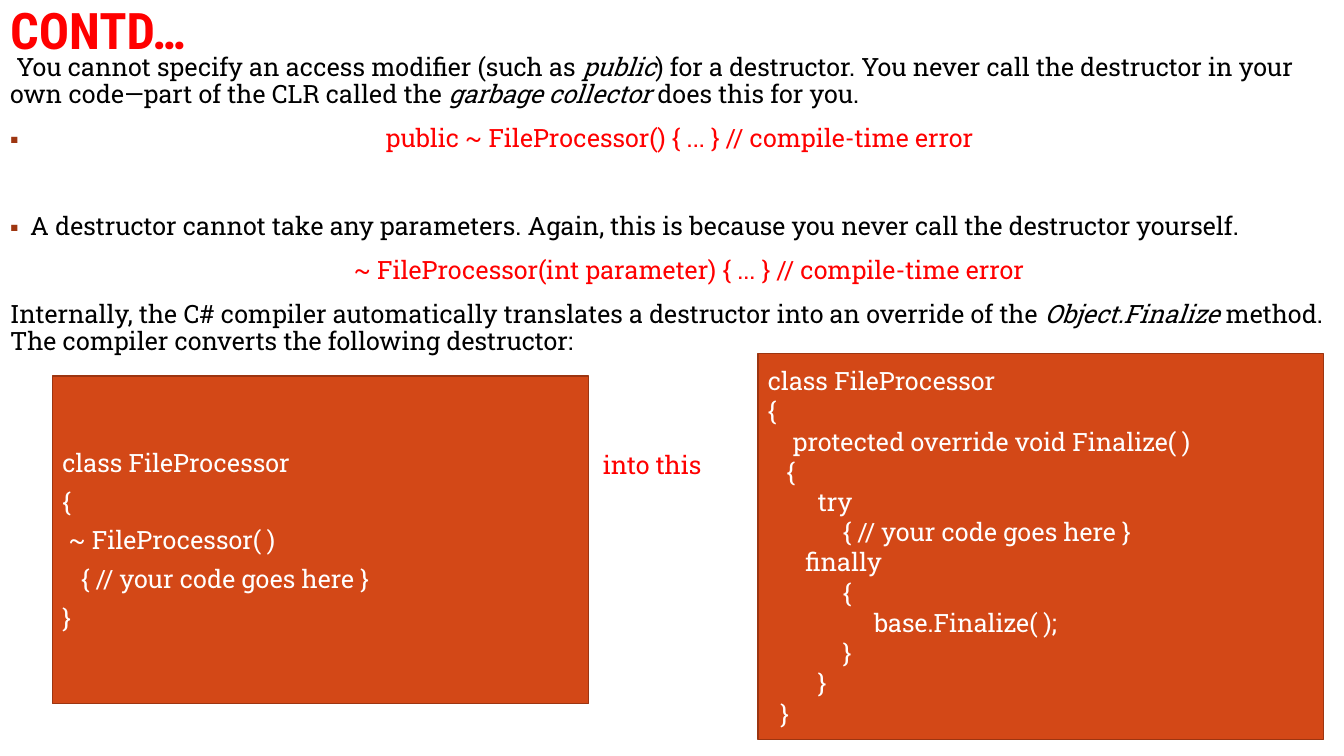
"""Build a slide on destructors and the finalizer they compile into."""
from dataclasses import dataclass

from lxml.etree import SubElement
from pptx import Presentation
from pptx.dml.color import RGBColor
from pptx.enum.shapes import MSO_SHAPE
from pptx.enum.text import MSO_ANCHOR, MSO_AUTO_SIZE, PP_ALIGN
from pptx.oxml.ns import qn
from pptx.shapes.base import BaseShape
from pptx.slide import Slide
from pptx.text.text import TextFrame
from pptx.util import Pt

COLORS = {
    "red": "FF0000",
    "black": "000000",
    "white": "FFFFFF",
    "bullet": "9E3611",
    "box": "D34817",
    "border": "9C3511",
}
TITLE_FONT = "Roboto Condensed"
TEXT_FONT = "Roboto Slab"


@dataclass(frozen=True)
class Span:
    text: str
    italic: bool = False


@dataclass(frozen=True)
class Line:
    spans: tuple[Span, ...]
    color: str = "black"
    size: float = 18
    font: str = TEXT_FONT
    bold: bool = False
    before: float = 12
    spacing: float = 0.9
    margin: float = 0
    indent: float = 0
    bullet: bool = False


@dataclass(frozen=True)
class CodeBox:
    left: float
    top: float
    width: float
    height: float
    before: float
    code: str


TITLE = Line((Span("CONTD…"),), "red", 36, TITLE_FONT, bold=True)
BODY = (
    Line((
        Span("You cannot specify an access modifier (such as "),
        Span("public", italic=True),
        Span(") for a destructor. You never call the destructor in your own code—part of the CLR called the "),
        Span("garbage collector ", italic=True),
        Span("does this for you."),
    ), indent=4.5),
    Line((Span("public ~ FileProcessor() { ... } // compile-time error"),), "red",
         margin=268.5, indent=-268.5, bullet=True),
    Line((Span("A destructor cannot take any parameters. Again, this is because you never call the destructor yourself."),),
         before=43.4, margin=14.4, indent=-14.4, bullet=True),
    Line((Span("~ FileProcessor(int parameter) { ... } // compile-time error"),), "red", margin=245.6),
    Line((
        Span("Internally, the C# compiler automatically translates a destructor into an override of the "),
        Span("Object.Finalize ", italic=True),
        Span("method. The compiler converts the following destructor:"),
    )),
    Line((Span("into this"),), "red", before=68.8, margin=423.5),
)
CODE_BOXES = (
    CodeBox(37.44, 268.56, 383.04, 234, 6, """class FileProcessor
{
 ~ FileProcessor( )
   { // your code goes here }
}"""),
    CodeBox(541.44, 252.72, 403.92, 275.76, 0, """class FileProcessor
{
    protected override void Finalize( )
   {
        try
            { // your code goes here }
      finally
            {
                 base.Finalize( );
            }
        }
  }"""),
)


def rgb(name: str) -> RGBColor:
    """Return a named palette colour."""
    return RGBColor.from_string(COLORS[name])


def write_lines(frame: TextFrame, lines: tuple[Line, ...], anchor: MSO_ANCHOR) -> None:
    """Fill a text frame with formatted paragraphs."""
    frame.word_wrap = True
    frame.auto_size = MSO_AUTO_SIZE.NONE
    frame.vertical_anchor = anchor
    for index, line in enumerate(lines):
        paragraph = frame.add_paragraph() if index else frame.paragraphs[0]
        properties = paragraph._p.get_or_add_pPr()
        properties.set("marL", str(Pt(line.margin)))
        properties.set("indent", str(Pt(line.indent)))
        if line.bullet:
            color = SubElement(properties, qn("a:buClr"))
            SubElement(color, qn("a:srgbClr"), val=COLORS["bullet"])
            SubElement(properties, qn("a:buSzPct"), val="85000")
            SubElement(properties, qn("a:buFont"), typeface=TEXT_FONT)
            SubElement(properties, qn("a:buChar"), char="▪")
        else:
            SubElement(properties, qn("a:buNone"))
        paragraph.alignment = PP_ALIGN.LEFT
        paragraph.line_spacing = line.spacing
        paragraph.space_before = Pt(line.before if index else 0)
        paragraph.space_after = Pt(0)
        for span in line.spans:
            run = paragraph.add_run()
            run.text = span.text
            run.font.name = line.font
            run.font.size = Pt(line.size)
            run.font.bold = line.bold
            run.font.italic = span.italic
            run.font.color.rgb = rgb(line.color)


def place(shape: BaseShape, left: float, top: float, width: float, height: float) -> None:
    """Position a shape, in points."""
    shape.left, shape.top = Pt(left), Pt(top)
    shape.width, shape.height = Pt(width), Pt(height)


def draw_code_box(slide: Slide, box: CodeBox) -> None:
    """Draw a filled rectangle holding a code listing."""
    shape = slide.shapes.add_shape(
        MSO_SHAPE.RECTANGLE, Pt(box.left), Pt(box.top), Pt(box.width), Pt(box.height))
    shape.shadow.inherit = False
    shape.fill.solid()
    shape.fill.fore_color.rgb = rgb("box")
    shape.line.color.rgb = rgb("border")
    shape.line.width = Pt(1)
    lines = tuple(Line((Span(text),), "white", before=box.before, spacing=1.0)
                  for text in box.code.splitlines())
    write_lines(shape.text_frame, lines, MSO_ANCHOR.MIDDLE)


def main() -> None:
    """Assemble and save the presentation."""
    presentation = Presentation()
    presentation.slide_width, presentation.slide_height = Pt(960), Pt(540)
    slide = presentation.slides.add_slide(presentation.slide_layouts[1])
    title, body = slide.shapes.title, slide.placeholders[1]
    place(title, 0, 2.88, 952.56, 41.04)
    write_lines(title.text_frame, (TITLE,), MSO_ANCHOR.MIDDLE)
    place(body, 0, 35.28, 960, 504.72)
    write_lines(body.text_frame, BODY, MSO_ANCHOR.TOP)
    for box in CODE_BOXES:
        draw_code_box(slide, box)
    presentation.save("out.pptx")


if __name__ == "__main__":
    main()
